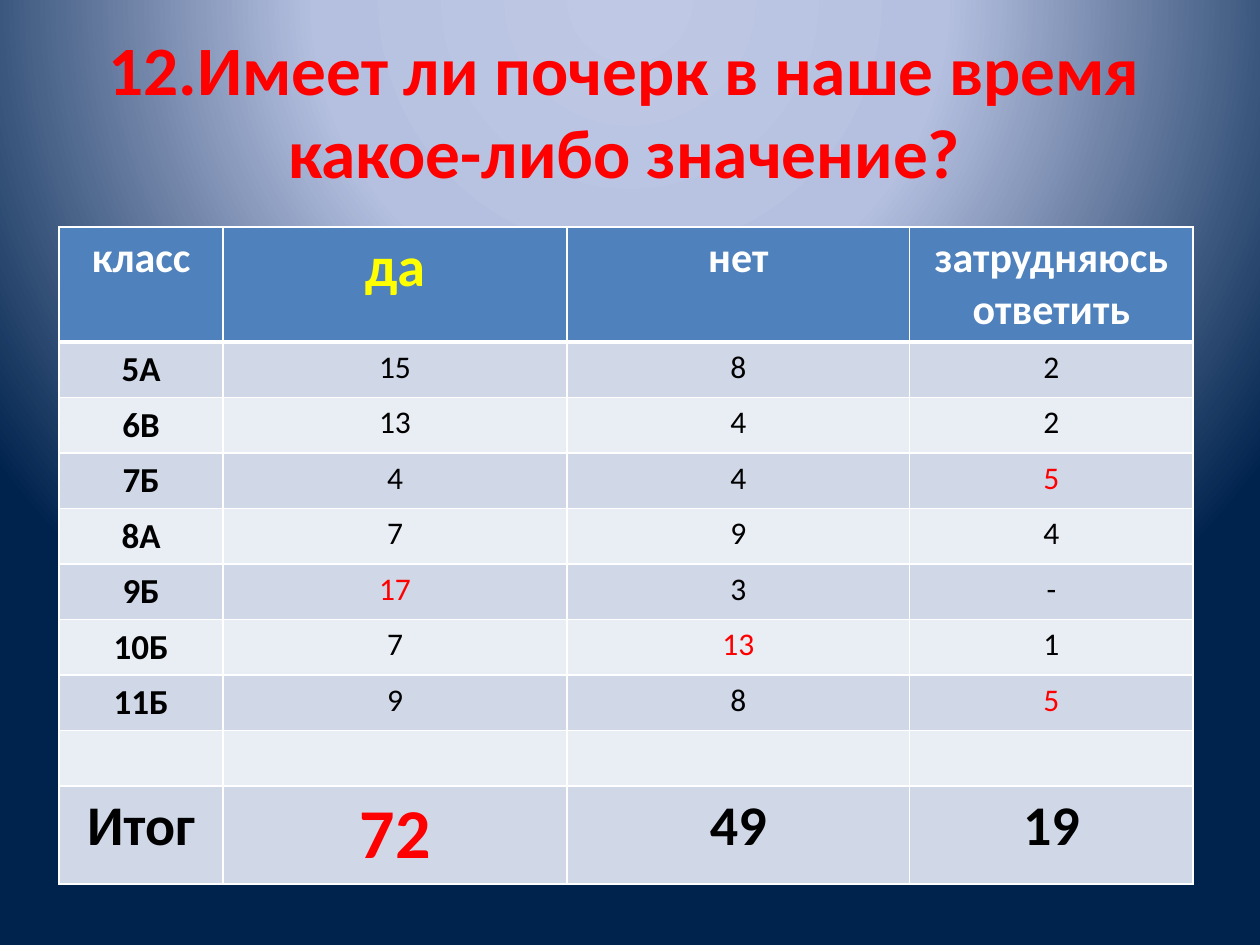
from pptx import Presentation
from pptx.dml.color import RGBColor
from pptx.enum import text
from pptx.oxml import parse_xml
from pptx.oxml.ns import nsdecls
from pptx.util import Inches, Pt

FONT = "Calibri"
RED, YELLOW, WHITE, BLACK = "FF0000", "FFFF00", "FFFFFF", "000000"
HEADER_FILL, BAND_FILLS = "4F81BD", ("D0D8E8", "E9EDF4")
COLUMN_WIDTHS = (1.3, 2.73, 2.72, 2.25)
HEADER_HEIGHT, ROW_HEIGHT, TOTAL_HEIGHT = 0.9, 0.44, 0.78

HEADINGS = ("класс", "да", "нет", "затрудняюсь ответить")
ANSWERS = {
    "5А": (15, 8, 2),
    "6В": (13, 4, 2),
    "7Б": (4, 4, 5),
    "8А": (7, 9, 4),
    "9Б": (17, 3, 0),
    "10Б": (7, 13, 1),
    "11Б": (9, 8, 5),
}


def rgb(value):
    return RGBColor.from_string(value)


def write(frame, words, size=18, color=BLACK, bold=False):
    paragraph = frame.paragraphs[0]
    paragraph.alignment = text.PP_ALIGN.CENTER
    run = paragraph.add_run()
    run.text = words
    run.font.name = FONT
    run.font.size = Pt(size)
    run.font.bold = bold
    run.font.color.rgb = rgb(color)


def paint_background(slide):
    stops = "".join(
        f'<a:gs pos="{percent * 1000}"><a:srgbClr val="{color}"/></a:gs>'
        for percent, color in ((0, "BFC9E5"), (40, "B5C0E0"), (100, "00234D"))
    )
    slide.element.cSld.insert(0, parse_xml(
        f'<p:bg {nsdecls("p", "a")}><p:bgPr><a:gradFill rotWithShape="1">'
        f'<a:gsLst>{stops}</a:gsLst><a:path path="circle">'
        '<a:fillToRect l="50000" t="-80000" r="50000" b="180000"/></a:path>'
        '</a:gradFill><a:effectLst/></p:bgPr></p:bg>'
    ))


def add_title(slide, words):
    title = slide.shapes.title
    title.left, title.top = Inches(0.23), Inches(0.16)
    title.width, title.height = Inches(9.45), Inches(1.41)
    frame = title.text_frame
    frame.word_wrap = True
    frame.auto_size = text.MSO_AUTO_SIZE.NONE
    frame.vertical_anchor = text.MSO_ANCHOR.MIDDLE
    write(frame, words, size=39.6, color=RED, bold=True)


def style_cell(cell, fill, top=1, bottom=1):
    cell.fill.solid()
    cell.fill.fore_color.rgb = rgb(fill)
    properties = cell._tc.get_or_add_tcPr()
    widths = {"L": 1, "R": 1, "T": top, "B": bottom}
    for position, (side, width) in enumerate(widths.items()):
        properties.insert(position, parse_xml(
            f'<a:ln{side} {nsdecls("a")} w="{Pt(width)}"><a:solidFill>'
            f'<a:srgbClr val="{WHITE}"/></a:solidFill></a:ln{side}>'
        ))


def add_answer_table(slide):
    heights = [HEADER_HEIGHT] + [ROW_HEIGHT] * (len(ANSWERS) + 1) + [TOTAL_HEIGHT]
    table = slide.shapes.add_table(
        len(heights), len(COLUMN_WIDTHS), Inches(0.47), Inches(1.8),
        Inches(sum(COLUMN_WIDTHS)), Inches(sum(heights)),
    ).table
    for column, width in zip(table.columns, COLUMN_WIDTHS):
        column.width = Inches(width)
    for index, height in enumerate(heights):
        table.rows[index].height = Inches(height)
        fill = BAND_FILLS[(index - 1) % 2] if index else HEADER_FILL
        for cell in table.rows[index].cells:
            style_cell(cell, fill, top=3 if index == 1 else 1,
                       bottom=1 if index else 3)
    return table


def fill_answers(table):
    def put(row, column, words, **style):
        write(table.cell(row, column).text_frame, words, **style)

    total_row = len(table.rows) - 1
    for column, heading in enumerate(HEADINGS):
        leading = column == 1
        put(0, column, heading, size=32 if leading else 24,
            color=YELLOW if leading else WHITE, bold=True)

    for row, class_name in enumerate(ANSWERS, start=1):
        put(row, 0, class_name, size=20, bold=True)

    put(total_row, 0, "Итог", size=32, bold=True)
    for column, counts in enumerate(zip(*ANSWERS.values()), start=1):
        for row, count in enumerate(counts, start=1):
            put(row, column, str(count or "-"),
                color=RED if count == max(counts) else BLACK)
        leading = column == 1
        put(total_row, column, str(sum(counts)), size=40 if leading else 32,
            color=RED if leading else BLACK, bold=True)


def main():
    deck = Presentation()
    deck.slide_width, deck.slide_height = Inches(10), Inches(7.5)
    slide = deck.slides.add_slide(deck.slide_layouts[5])
    paint_background(slide)
    add_title(slide, "12.Имеет ли почерк в наше время какое-либо значение?")
    fill_answers(add_answer_table(slide))
    deck.save("out.pptx")


if __name__ == "__main__":
    main()
